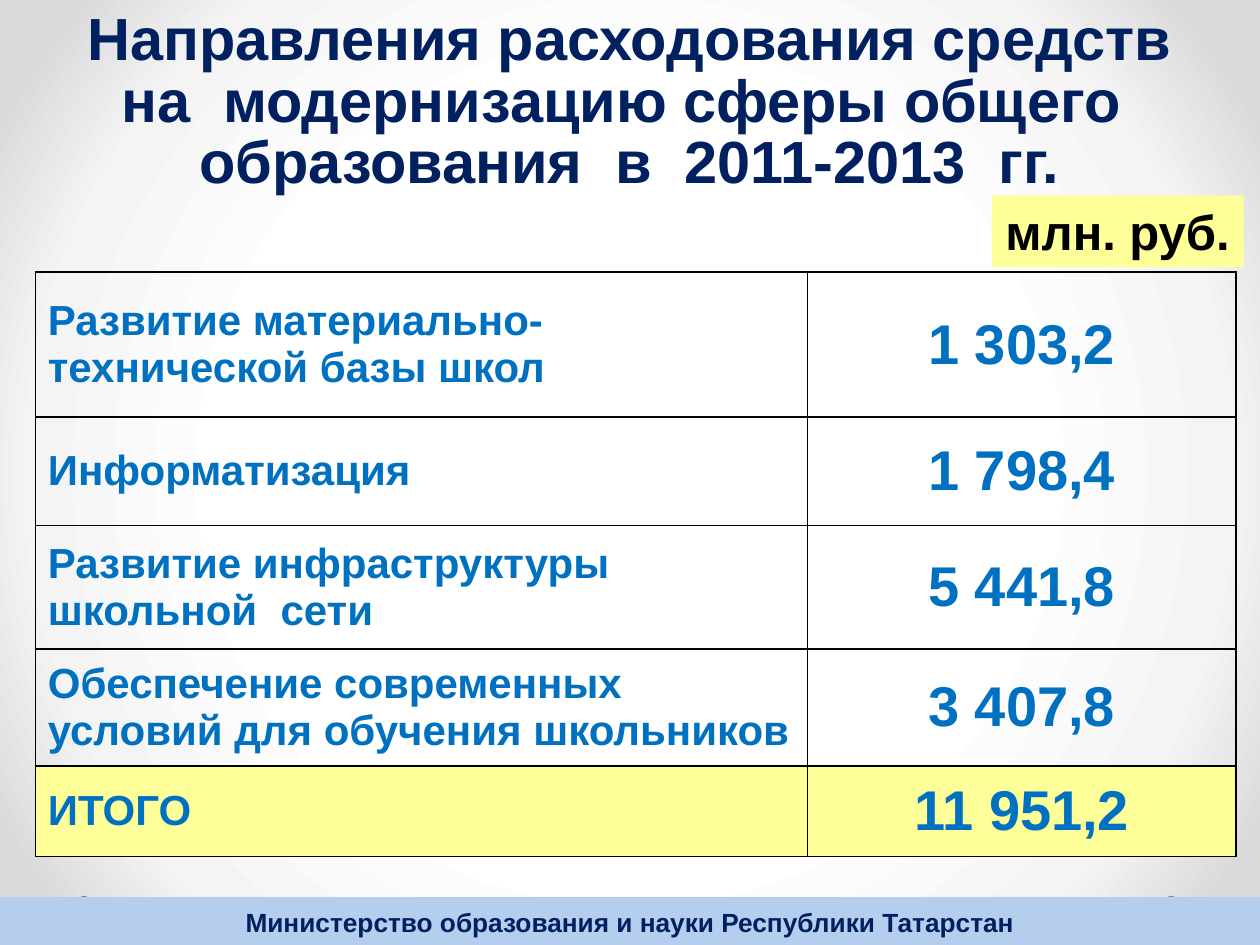
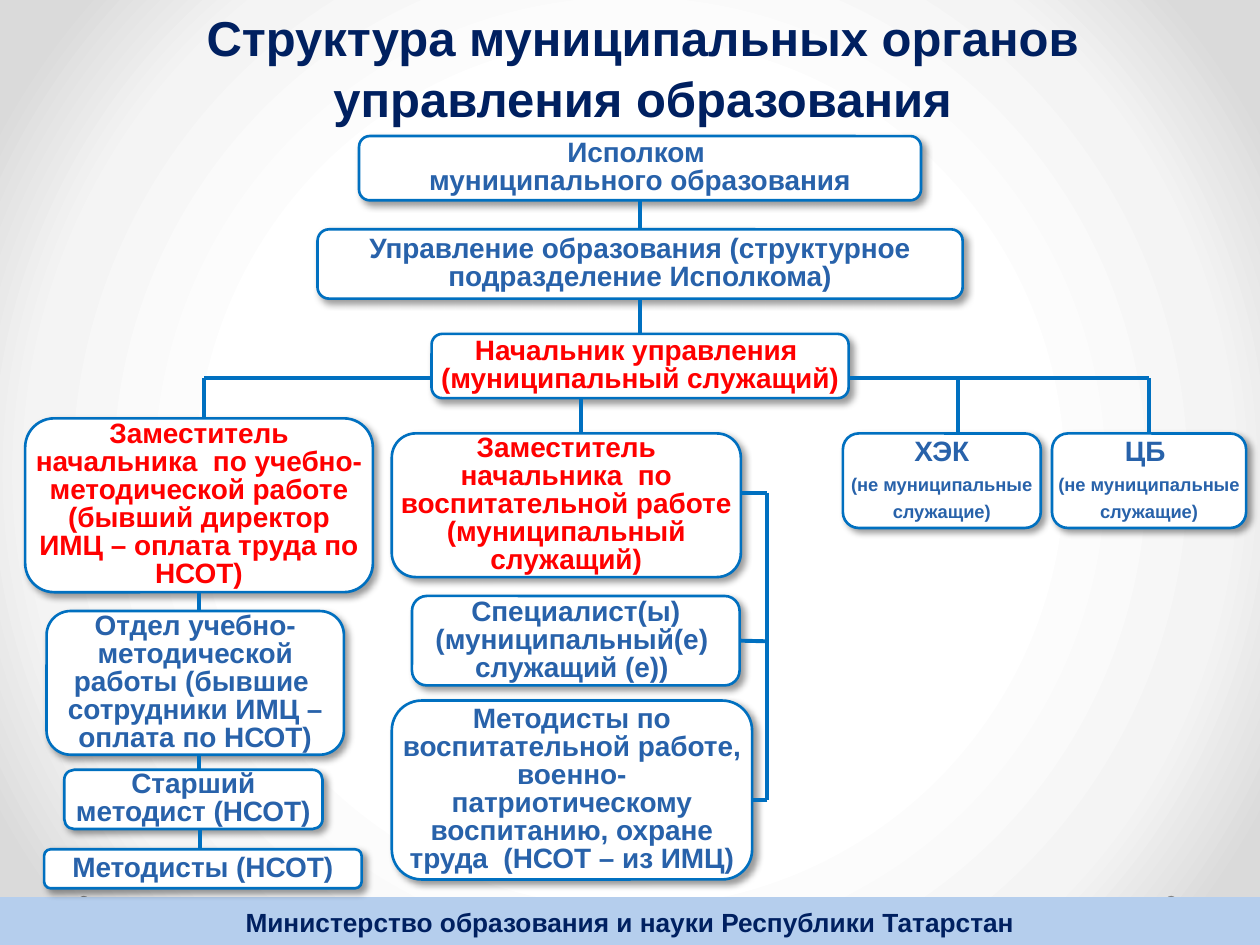
from lxml import etree
from pptx import Presentation
from pptx.dml.color import RGBColor
from pptx.enum.shapes import MSO_CONNECTOR, MSO_SHAPE
from pptx.enum.text import MSO_ANCHOR, MSO_AUTO_SIZE, PP_ALIGN
from pptx.oxml import parse_xml
from pptx.oxml.ns import qn
from pptx.util import Inches, Pt

RECT = MSO_SHAPE.RECTANGLE
ROUND = MSO_SHAPE.ROUNDED_RECTANGLE
OVAL = MSO_SHAPE.OVAL
LINE = MSO_CONNECTOR.STRAIGHT
MIDDLE = MSO_ANCHOR.MIDDLE
FIXED = MSO_AUTO_SIZE.NONE
LEFT, CENTER = PP_ALIGN.LEFT, PP_ALIGN.CENTER
TOP_SIDE, RIGHT_SIDE, BOTTOM_SIDE = 0, 3, 2

FONT = "Arial"
NAVY, BLUE, STEEL, RED = "002060", "0070C0", "2862AA", "FF0000"
BAND, DOT, YELLOW = "B5CEED", "808080", "FFFF99"
BLACK, WHITE = "000000", "FFFFFF"
AXIS = 5.08
RAIL = 3
SPINE = 6.09
SPACE = 'xmlns:a="http://schemas.openxmlformats.org/drawingml/2006/main"'

COSTS = [
    ("Развитие материально-технической базы школ", "1 303,2", 1.15),
    ("Информатизация", "1 798,4", 0.86),
    ("Развитие инфраструктуры  школьной  сети", "5 441,8", 0.98),
    ("Обеспечение современных условий для обучения школьников", "3 407,8", 0.93),
    ("ИТОГО", "11 951,2", 0.72),
]


def color(code):
    return RGBColor.from_string(code)


def write(frame, text, size=16, hue=STEEL, align=CENTER, lead=None, small=None):
    for i, part in enumerate(text.split("\n")):
        para = frame.paragraphs[0] if i == 0 else frame.add_paragraph()
        para.alignment = align
        if lead:
            para.line_spacing = Pt(lead)
        run = para.add_run()
        run.text = part
        font = run.font
        font.name, font.bold = FONT, True
        font.size = Pt(small if small and i else size)
        font.color.rgb = color(hue)


def fit(frame, side=0.1, edge=0.05, wrap=True):
    frame.auto_size = FIXED
    frame.word_wrap = wrap
    frame.vertical_anchor = MIDDLE
    frame.margin_left = frame.margin_right = Inches(side)
    frame.margin_top = frame.margin_bottom = Inches(edge)


def shape(slide, kind, left, top, width, height, fill):
    item = slide.shapes.add_shape(
        kind, Inches(left), Inches(top), Inches(width), Inches(height))
    item.shadow.inherit = False
    item.fill.solid()
    item.fill.fore_color.rgb = color(fill)
    item.line.fill.background()
    return item


def shade(item):
    effect = item.element.spPr.find(qn("a:effectLst"))
    effect.append(parse_xml(
        f'<a:outerShdw {SPACE} blurRad="{Pt(4)}" dist="{Pt(3)}" dir="2700000" '
        f'algn="tl" rotWithShape="0"><a:srgbClr val="{BLACK}">'
        '<a:alpha val="40000"/></a:srgbClr></a:outerShdw>'))


def box(slide, left, top, width, height, text, hue=STEEL, small=None):
    item = shape(slide, ROUND, left, top, width, height, WHITE)
    item.line.color.rgb = color(BLUE)
    item.line.width = Pt(1.5)
    shade(item)
    fit(item.text_frame, side=0)
    write(item.text_frame, text, hue=hue, lead=16, small=small)
    return item


def link(slide, x1, y1, x2, y2, start=None, end=None):
    line = slide.shapes.add_connector(
        LINE, Inches(x1), Inches(y1), Inches(x2), Inches(y2))
    line.line.color.rgb = color(BLUE)
    line.line.width = Pt(2.25)
    etree.SubElement(line.element.spPr, qn("a:effectLst"))
    if start:
        line.begin_connect(*start)
    if end:
        line.end_connect(*end)


def title(slide, left, top, width, height, text, size):
    head = slide.shapes.title
    head.left, head.top = Inches(left), Inches(top)
    head.width, head.height = Inches(width), Inches(height)
    fit(head.text_frame, edge=0.08)
    write(head.text_frame, text, size=size, hue=NAVY, lead=35)


def paint(master):
    master.background.fill.solid()
    ground = master.element.find(".//" + qn("p:bgPr"))
    ground.remove(ground[0])
    stops = "".join(
        f'<a:gs pos="{pos * 1000}"><a:srgbClr val="{code}"/></a:gs>'
        for pos, code in [(50, WHITE), (76, "F4F4F4"), (92, "DADADA")])
    ground.insert(0, parse_xml(
        f'<a:gradFill {SPACE} rotWithShape="1"><a:gsLst>{stops}</a:gsLst>'
        '<a:path path="circle"><a:fillToRect l="50000" t="50000" r="50000" '
        'b="50000"/></a:path></a:gradFill>'))


def brand(layout, slide):
    for spare in list(layout.placeholders)[1:]:
        layout.shapes.element.remove(spare.element)
    parts = [shape(slide, OVAL, x, 7.11, 0.09, 0.09, DOT) for x in (9.25, 0.62)]
    band = shape(slide, RECT, 0, 7.12, 10, 0.39, BAND)
    fit(band.text_frame)
    write(band.text_frame, "Министерство образования и науки Республики Татарстан",
          size=15, hue=NAVY)
    for part in parts + [band]:
        layout.shapes.element.append(part.element)


def rule(cell):
    props = cell._tc.get_or_add_tcPr()
    for side in ("lnL", "lnR", "lnT", "lnB"):
        props.append(parse_xml(
            f'<a:{side} {SPACE} w="{Pt(1)}"><a:solidFill>'
            f'<a:srgbClr val="{BLACK}"/></a:solidFill></a:{side}>'))


def grid(slide):
    table = slide.shapes.add_table(
        len(COSTS), 2, Inches(0.28), Inches(2.16), Inches(9.53), Inches(4.64)).table
    table.first_row = table.horz_banding = False
    for col, width in zip(table.columns, (6.13, 3.4)):
        col.width = Inches(width)
    for r, (name, cost, height) in enumerate(COSTS):
        table.rows[r].height = Inches(height)
        for c, (text, size, align) in enumerate([(name, 24, LEFT), (cost, 32, CENTER)]):
            cell = table.cell(r, c)
            cell.vertical_anchor = MIDDLE
            rule(cell)
            if r == len(COSTS) - 1:
                cell.fill.solid()
                cell.fill.fore_color.rgb = color(YELLOW)
            else:
                cell.fill.background()
            write(cell.text_frame, text, size=size, hue=BLUE, align=align)


def budget(slide):
    title(slide, 0.35, 0.09, 9.29, 1.46,
          "Направления расходования средств на  модернизацию сферы общего  "
          "образования  в  2011-2013  гг.", 34)
    grid(slide)
    unit = shape(slide, RECT, 7.87, 1.55, 2, 0.57, YELLOW)
    fit(unit.text_frame, wrap=False)
    write(unit.text_frame, "млн. руб.", size=28, hue=BLACK)


def tower(slide):
    rows = [
        (1.08, 4.46, 0.51, "Исполком \nмуниципального образования", STEEL),
        (1.82, 5.12, 0.55,
         "Управление образования (структурное подразделение Исполкома)", STEEL),
        (2.65, 3.31, 0.51, "Начальник управления \n(муниципальный служащий)", RED),
    ]
    stack = [box(slide, AXIS - wide / 2, top, wide, high, text, hue)
             for top, wide, high, text, hue in rows]
    for upper, lower in zip(stack, stack[1:]):
        link(slide, AXIS, 0, AXIS, 0, (upper, BOTTOM_SIDE), (lower, TOP_SIDE))


def method(slide):
    chief = box(slide, 0.2, 3.32, 2.76, 1.38,
                "Заместитель начальника  по учебно-методической работе "
                "(бывший директор ИМЦ – оплата труда по НСОТ)", RED)
    box(slide, 0.37, 4.85, 2.36, 1.14,
        "Отдел учебно-методической работы (бывшие  сотрудники ИМЦ – оплата по НСОТ)")
    box(slide, 0.51, 6.11, 2.05, 0.47, "Старший методист (НСОТ)")
    box(slide, 0.35, 6.74, 2.52, 0.31, "Методисты (НСОТ)")
    link(slide, 1.58, 4.7, 1.58, 4.85, start=(chief, BOTTOM_SIDE))
    link(slide, 1.58, 5.99, 1.58, 6.11)
    link(slide, 1.59, 6.58, 1.59, 6.74)
    link(slide, 1.62, RAIL, 1.62, 3.32)
    link(slide, 3.41, RAIL, 1.62, RAIL)


def school(slide):
    box(slide, 3.11, 3.44, 2.77, 1.14,
        "Заместитель начальника  по воспитательной работе "
        "(муниципальный служащий)", RED)
    staff = box(slide, 3.27, 4.73, 2.6, 0.71,
                "Специалист(ы) (муниципальный(е)  служащий (е)) ")
    box(slide, 3.11, 5.56, 2.86, 1.42,
        "Методисты по воспитательной работе, военно-патриотическому "
        "воспитанию, охране труда  (НСОТ – из ИМЦ)")
    link(slide, 4.61, 3.16, 4.61, 3.44)
    link(slide, SPINE, 3.91, SPINE, 6.35)
    link(slide, SPINE, 3.91, 5.88, 3.91)
    link(slide, SPINE, 5.09, 5.87, 5.09, end=(staff, RIGHT_SIDE))
    link(slide, SPINE, 6.35, 5.97, 6.35)


def support(slide):
    note = "\n(не муниципальные служащие)"
    box(slide, 6.69, 3.44, 1.57, 0.75, "ХЭК" + note, small=10.5)
    books = box(slide, 8.35, 3.44, 1.54, 0.75, "ЦБ " + note, small=10.5)
    link(slide, 9.12, RAIL, 6.74, RAIL)
    link(slide, 7.6, RAIL, 7.6, 3.44)
    link(slide, 9.12, RAIL, 9.12, 3.44, end=(books, TOP_SIDE))


def chart(slide):
    title(slide, 1.5, 0.13, 7.2, 0.79,
          "Структура муниципальных органов \nуправления образования", 28)
    for draw in (tower, method, school, support):
        draw(slide)


def main():
    deck = Presentation()
    deck.slide_width, deck.slide_height = Inches(10), Inches(7.5)
    layout = deck.slide_layouts[5]
    paint(deck.slide_master)
    first, second = (deck.slides.add_slide(layout) for _ in range(2))
    brand(layout, first)
    budget(first)
    chart(second)
    deck.save("out.pptx")


if __name__ == "__main__":
    main()
